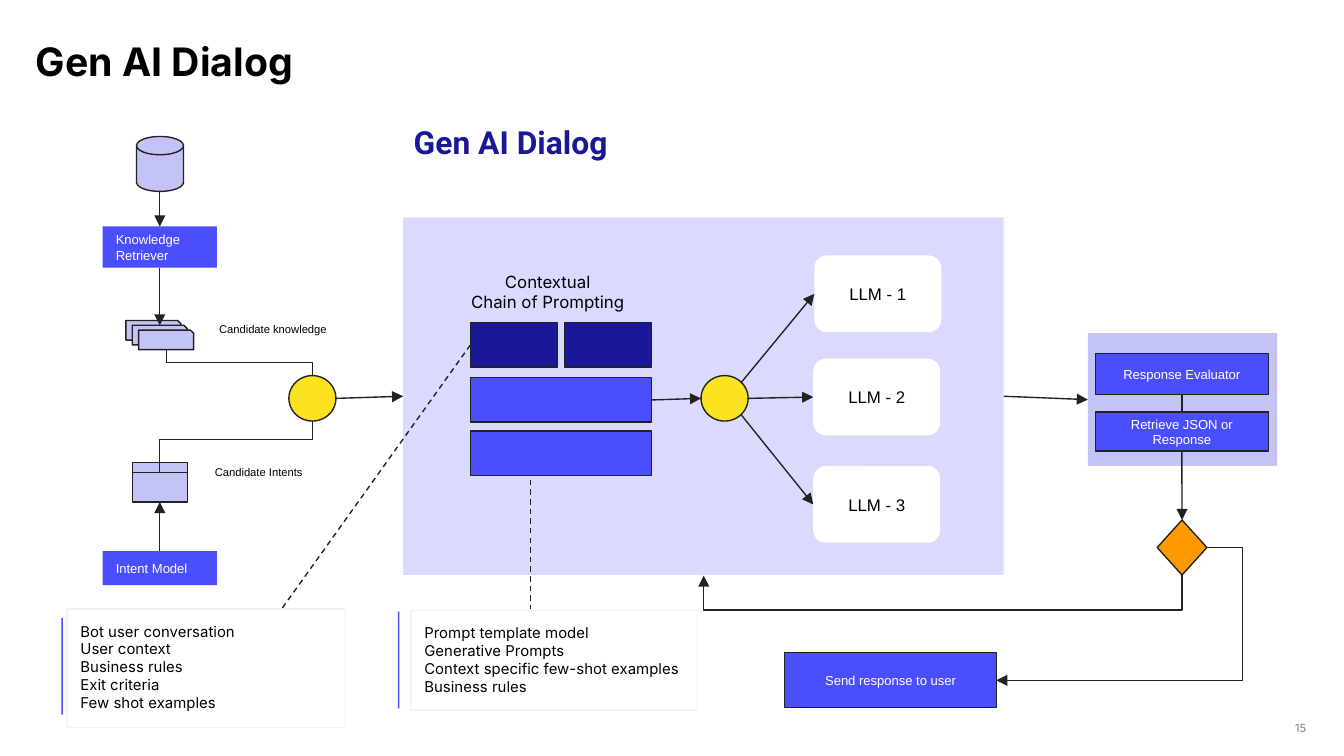
import pptx
import pptx.util
import pptx.dml.color
import pptx.enum.dml
import pptx.enum.shapes
import pptx.enum.text
import pptx.oxml.ns
from lxml import etree

Cm, Pt = pptx.util.Cm, pptx.util.Pt
RGBColor = pptx.dml.color.RGBColor
SHAPE = pptx.enum.shapes.MSO_SHAPE
CONNECTOR = pptx.enum.shapes.MSO_CONNECTOR
ALIGN = pptx.enum.text.PP_ALIGN
ANCHOR = pptx.enum.text.MSO_ANCHOR
AUTO = pptx.enum.text.MSO_AUTO_SIZE
qn = pptx.oxml.ns.qn

BLACK = RGBColor(0x00, 0x00, 0x00)
WHITE = RGBColor(0xFF, 0xFF, 0xFF)
INK = RGBColor(0x20, 0x23, 0x22)
GREY = RGBColor(0x7F, 0x7F, 0x7F)
PALE_GREY = RGBColor(0xF2, 0xF2, 0xF2)
NAVY = RGBColor(0x19, 0x19, 0x98)
BLUE = RGBColor(0x4B, 0x4E, 0xFC)
LILAC = RGBColor(0xC3, 0xC3, 0xF6)
PALE = RGBColor(0xDA, 0xDA, 0xFE)
YELLOW = RGBColor(0xFB, 0xE3, 0x21)
ORANGE = RGBColor(0xFF, 0x99, 0x00)
TOP, LEFT, BOTTOM, RIGHT = range(4)


def write(sp, lines, size, color=BLACK, font="Arial", align=ALIGN.LEFT,
          anchor=ANCHOR.TOP, inset=0.25, bold=False, spacing=None, grow=False):
    tf = sp.text_frame
    tf.word_wrap = True
    tf.auto_size = AUTO.SHAPE_TO_FIT_TEXT if grow else AUTO.NONE
    tf.vertical_anchor = anchor
    tf.margin_left = tf.margin_right = Cm(inset)
    tf.margin_top = tf.margin_bottom = Cm(inset)
    for i, line in enumerate(lines):
        p = tf.add_paragraph() if i else tf.paragraphs[0]
        p.alignment = align
        p.space_before = Pt(0)
        if spacing:
            p.line_spacing = spacing
        r = p.add_run()
        r.text = line
        r.font.size, r.font.name, r.font.bold = Pt(size), font, bold
        r.font.color.rgb = color


def add_shape(s, kind, x, y, w, h, fill=None, line=INK):
    sp = s.shapes.add_shape(kind, Cm(x), Cm(y), Cm(w), Cm(h))
    sp.shadow.inherit = False
    if fill is None:
        sp.fill.background()
    else:
        sp.fill.solid()
        sp.fill.fore_color.rgb = fill
    if line is None:
        sp.line.fill.background()
    else:
        sp.line.color.rgb = line
        sp.line.width = Pt(0.75)
    return sp


def add_step(s, x, y, w, h, text, line=INK, align=ALIGN.CENTER):
    sp = add_shape(s, SHAPE.RECTANGLE, x, y, w, h, BLUE, line)
    write(sp, [text], 7, WHITE, align=align, anchor=ANCHOR.MIDDLE)
    return sp


def add_label(s, x, y, w, h, lines, size, **style):
    write(s.shapes.add_textbox(Cm(x), Cm(y), Cm(w), Cm(h)), lines, size, **style)


def add_note(s, x, y, w, h, lines, bar_x, bar_y):
    sp = add_shape(s, SHAPE.RECTANGLE, x, y, w, h, line=PALE_GREY)
    write(sp, lines, 8, font="Inter", grow=True)
    add_shape(s, SHAPE.RECTANGLE, bar_x, bar_y, 0.03, 1.83, BLUE, None)


def style_line(c, arrow, dashed=False):
    c.line.color.rgb = INK
    c.line.width = Pt(0.75)
    if dashed:
        c.line.dash_style = pptx.enum.dml.MSO_LINE.DASH
    if arrow:
        etree.SubElement(c.line._get_or_add_ln(), qn("a:tailEnd"), type="triangle")
    etree.SubElement(c._element.spPr, qn("a:effectLst"))


def add_line(s, begin, end, arrow=True, dashed=False):
    """Each end is either an (x, y) point in cm or a (shape, side) pair."""
    joined = [not isinstance(e[0], (int, float)) for e in (begin, end)]
    (x1, y1), (x2, y2) = [(0, 0) if j else e for j, e in zip(joined, (begin, end))]
    c = s.shapes.add_connector(CONNECTOR.STRAIGHT, Cm(x1), Cm(y1), Cm(x2), Cm(y2))
    if joined[0]:
        c.begin_connect(*begin)
    if joined[1]:
        c.end_connect(*end)
    style_line(c, arrow, dashed)


def add_elbow(s, begin, end, bend, vertical=False, arrow=False):
    """Bent connector; bend is the turn's share of the way, vertical its start."""
    (x1, y1), (x2, y2) = begin, end
    c = s.shapes.add_connector(CONNECTOR.ELBOW, Cm(x1), Cm(y1), Cm(x2), Cm(y2))
    style_line(c, arrow)
    guides = c._element.spPr.find(qn("a:prstGeom")).get_or_add_avLst()
    etree.SubElement(guides, qn("a:gd"), name="adj1", fmla=f"val {round(bend * 100000)}")
    if vertical:
        w, h = abs(y2 - y1), abs(x2 - x1)
        c.left, c.top = Cm((x1 + x2 - w) / 2), Cm((y1 + y2 - h) / 2)
        c.width, c.height = Cm(w), Cm(h)
        xfrm = c._element.spPr.find(qn("a:xfrm"))
        xfrm.attrib.pop("flipV", None)
        xfrm.attrib.pop("flipH", None)
        down, right = y2 > y1, x2 > x1
        xfrm.set("rot", str((90 if down and not right else 270) * 60000))
        if down and right:
            xfrm.set("flipH", "1")


def main():
    prs = pptx.Presentation()
    prs.slide_width, prs.slide_height = Cm(25.4), Cm(14.29)
    s = prs.slides.add_slide(prs.slide_layouts[5])

    # Headings and page number
    title = s.shapes.title
    title.left, title.top, title.width, title.height = Cm(0.43), Cm(0.33), Cm(20.8), Cm(1.12)
    write(title, ["Gen AI Dialog"], 21, font="Inter", bold=True, spacing=1.15)
    add_label(s, 7.57, 1.96, 11.35, 1.83, ["Gen AI Dialog"], 17, color=NAVY,
              font="Roboto", bold=True, spacing=1.15, grow=True)
    add_label(s, 23.98, 13.51, 0.71, 0.38, ["15"], 6, color=GREY, font="Inter",
              align=ALIGN.RIGHT, anchor=ANCHOR.BOTTOM, inset=0)

    # Background panels
    dialog = add_shape(s, SHAPE.RECTANGLE, 7.62, 4.11, 11.35, 6.76, PALE, None)
    response = add_shape(s, SHAPE.RECTANGLE, 20.56, 6.3, 3.58, 2.51, LILAC, None)

    # Knowledge and intent sources
    add_shape(s, SHAPE.FLOWCHART_MAGNETIC_DISK, 2.58, 2.58, 0.89, 1.04, LILAC)
    retriever = add_step(s, 1.94, 4.28, 2.16, 0.78, "Knowledge Retriever", None, ALIGN.LEFT)
    intent = add_step(s, 1.94, 10.42, 2.16, 0.64, "Intent Model", None, ALIGN.LEFT)
    for i in range(3):
        add_shape(s, SHAPE.SNIP_1_RECTANGLE, 2.38 + 0.12 * i, 6.06 + 0.09 * i, 1.04, 0.37, LILAC)
    for y, h in ((8.74, 0.56), (8.93, 0.56)):
        intents = add_shape(s, SHAPE.RECTANGLE, 2.5, y, 1.04, h, LILAC)
    add_label(s, 3.89, 5.97, 2.77, 0.76, ["Candidate knowledge"], 6, grow=True)
    add_label(s, 3.81, 8.66, 2.54, 0.76, ["Candidate Intents"], 6, grow=True)

    # Prompt chain and junctions
    add_label(s, 7.72, 4.88, 5.26, 1.27, ["Contextual", "Chain of Prompting"], 9,
              font="Inter", align=ALIGN.CENTER, grow=True)
    context = add_shape(s, SHAPE.RECTANGLE, 8.89, 6.1, 1.65, 0.84, NAVY)
    add_shape(s, SHAPE.RECTANGLE, 10.67, 6.1, 1.65, 0.84, NAVY)
    prompt = add_shape(s, SHAPE.RECTANGLE, 8.89, 7.14, 3.43, 0.84, BLUE)
    add_shape(s, SHAPE.RECTANGLE, 8.89, 8.15, 3.43, 0.84, BLUE)
    for x in (5.46, 13.25):
        add_shape(s, SHAPE.OVAL, x, 7.1, 0.89, 0.86, YELLOW)

    # Language models, each fed from the second junction
    models = (15.39, 4.83, (14.0, 7.24)), (15.37, 6.78, (14.13, 7.53)), (15.37, 8.81, (14.0, 7.83))
    for i, (x, y, start) in enumerate(models, 1):
        sp = add_shape(s, SHAPE.ROUNDED_RECTANGLE, x, y, 2.4, 1.45, WHITE, None)
        write(sp, [f"LLM - {i}"], 9, align=ALIGN.CENTER, anchor=ANCHOR.MIDDLE, inset=0.18)
        add_line(s, start, (sp, LEFT))

    # Response handling
    evaluator = add_step(s, 20.7, 6.68, 3.27, 0.78, "Response Evaluator")
    retrieve = add_step(s, 20.7, 7.79, 3.27, 0.74, "Retrieve JSON or Response")
    decision = add_shape(s, SHAPE.FLOWCHART_DECISION, 21.87, 9.83, 0.94, 1.04, ORANGE)
    add_step(s, 14.83, 12.34, 4, 1.04, "Send response to user")

    # Notes
    add_note(s, 1.27, 11.51, 5.26, 2.24,
             ["Bot user conversation", "User context", "Business rules",
              "Exit criteria", "Few shot examples"], 1.16, 11.68)
    add_note(s, 7.77, 11.54, 5.41, 1.88,
             ["Prompt template model", "Generative Prompts",
              "Context specific few-shot examples", "Business rules"], 7.52, 11.56)

    # Straight links
    add_line(s, (3.02, 3.62), (retriever, TOP))
    add_line(s, (retriever, BOTTOM), (3.02, 6.15))
    add_line(s, (intent, TOP), (intents, BOTTOM))
    add_line(s, (6.35, 7.53), (dialog, LEFT))
    add_line(s, (prompt, RIGHT), (13.25, 7.53))
    add_line(s, (dialog, RIGHT), (response, LEFT))
    add_line(s, (evaluator, BOTTOM), (retrieve, TOP), arrow=False)
    add_line(s, (retrieve, BOTTOM), (decision, TOP))
    add_line(s, (context, LEFT), (5.31, 11.53), arrow=False, dashed=True)
    add_line(s, (10.03, 9.07), (10.03, 11.51), arrow=False, dashed=True)

    # Bent links
    add_elbow(s, (3.15, 6.6), (5.91, 7.1), 0.5, vertical=True)
    add_elbow(s, (3.02, 8.93), (5.91, 7.96), 0.64, vertical=True)
    add_elbow(s, (22.81, 10.35), (18.83, 12.86), -0.17, arrow=True)
    add_elbow(s, (22.34, 10.87), (13.3, 10.88), 66, vertical=True, arrow=True)

    prs.save("out.pptx")


if __name__ == "__main__":
    main()
